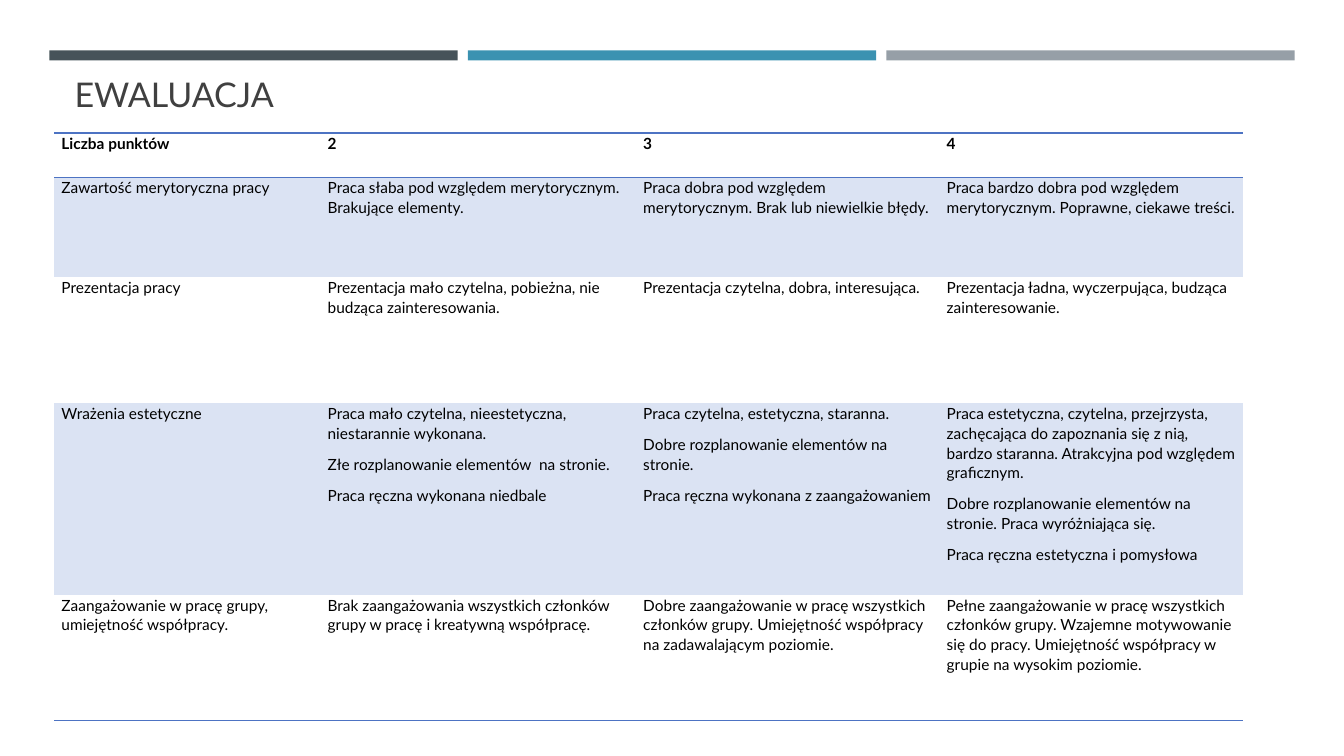
from lxml.etree import SubElement
from pptx import Presentation
from pptx.dml.color import RGBColor
from pptx.enum.shapes import MSO_SHAPE
from pptx.enum.text import MSO_ANCHOR, MSO_AUTO_SIZE, PP_ALIGN
from pptx.oxml.ns import qn
from pptx.util import Inches, Pt

SLATE = RGBColor(0x46, 0x53, 0x59)
TEAL = RGBColor(0x3B, 0x92, 0xB1)
GREY = RGBColor(0x96, 0x9F, 0xA7)
DARK = RGBColor(0x40, 0x40, 0x40)
BLACK = RGBColor(0, 0, 0)
BLUE = RGBColor(0x4D, 0x73, 0xC3)
PALE = RGBColor(0xDB, 0xE3, 0xF3)

COLS = [2.64, 3.13, 3.01, 3.01]
ROWS = [0.44, 0.99, 1.25, 1.9, 1.25]
TEXTS = [
    ["Liczba punktów", "2", "3", "4"],
    ["Zawartość merytoryczna pracy",
     "Praca słaba pod względem merytorycznym. Brakujące elementy.",
     "Praca dobra pod względem merytorycznym. Brak lub niewielkie błędy.",
     "Praca bardzo dobra pod względem merytorycznym. "
     "Poprawne, ciekawe treści."],
    ["Prezentacja pracy",
     "Prezentacja mało czytelna, pobieżna, nie budząca zainteresowania.",
     "Prezentacja czytelna, dobra, interesująca.",
     "Prezentacja ładna, wyczerpująca, budząca zainteresowanie."],
    ["Wrażenia estetyczne",
     "Praca mało czytelna, nieestetyczna, niestarannie wykonana.\n"
     "Złe rozplanowanie elementów  na stronie.\n"
     "Praca ręczna wykonana niedbale",
     "Praca czytelna, estetyczna, staranna.\n"
     "Dobre rozplanowanie elementów na stronie.\n"
     "Praca ręczna wykonana z zaangażowaniem",
     "Praca estetyczna, czytelna, przejrzysta, zachęcająca do zapoznania "
     "się z nią, bardzo staranna. Atrakcyjna pod względem graficznym.\n"
     "Dobre rozplanowanie elementów na stronie. Praca wyróżniająca się.\n"
     "Praca ręczna estetyczna i pomysłowa"],
    ["Zaangażowanie w pracę grupy, umiejętność współpracy.",
     "Brak zaangażowania wszystkich członków grupy w pracę "
     "i kreatywną współpracę.",
     "Dobre zaangażowanie w pracę wszystkich członków grupy. "
     "Umiejętność współpracy na zadawalającym poziomie.",
     "Pełne zaangażowanie w pracę wszystkich członków grupy. "
     "Wzajemne motywowanie się do pracy. "
     "Umiejętność współpracy w grupie na wysokim poziomie."],
]


def put(frame, text, size=11, color=BLACK, bold=False, lead=1.06, after=8):
    frame.text = text
    for para in frame.paragraphs:
        para.alignment = PP_ALIGN.LEFT
        para.line_spacing = lead
        para.space_before = Pt(0)
        para.space_after = Pt(after)
        for run in para.runs:
            font = run.font
            font.name = "Lato"
            font.size = Pt(size)
            font.bold = bold
            font.color.rgb = color


def edge(cell, sides):
    """Draw the given sides (T, B) in blue and hide the others."""
    props = cell._tc.get_or_add_tcPr()
    for spot, side in enumerate("LRTB"):
        line = SubElement(props, qn(f"a:ln{side}"), w=str(Pt(1)))
        if side in sides:
            fill = SubElement(line, qn("a:solidFill"))
            SubElement(fill, qn("a:srgbClr"), val=str(BLUE))
        else:
            SubElement(line, qn("a:noFill"))
        props.insert(spot, line)


deck = Presentation()
deck.slide_width, deck.slide_height = Inches(13.33), Inches(7.5)
slide = deck.slides.add_slide(deck.slide_layouts[5])

# Three bars along the top
for i, color in enumerate([SLATE, TEAL, GREY]):
    bar = slide.shapes.add_shape(
        MSO_SHAPE.RECTANGLE, Inches(0.49 + 4.15 * i), Inches(0.5),
        Inches(4.05), Inches(0.1))
    bar.shadow.inherit = False
    bar.fill.solid()
    bar.fill.fore_color.rgb = color
    bar.line.fill.background()

# Title
title = slide.shapes.title
title.left, title.top = Inches(0.64), Inches(0.77)
title.width, title.height = Inches(12.06), Inches(0.42)
put(title.text_frame, "EWALUACJA", size=24.3, color=DARK, lead=0.9, after=0)
title.text_frame.vertical_anchor = MSO_ANCHOR.BOTTOM
title.text_frame.auto_size = MSO_AUTO_SIZE.NONE

# Grading table
table = slide.shapes.add_table(
    len(ROWS), len(COLS), Inches(0.54), Inches(1.32),
    Inches(sum(COLS)), Inches(sum(ROWS))).table
table.first_row = table.horz_banding = False
for col, width in zip(table.columns, COLS):
    col.width = Inches(width)
for row, height in zip(table.rows, ROWS):
    row.height = Inches(height)

# Cells: bold head, shaded odd rows, rules around the head and at the foot
rules = {0: "TB", 1: "T", len(ROWS) - 1: "B"}
for r, texts in enumerate(TEXTS):
    for c, text in enumerate(texts):
        cell = table.cell(r, c)
        put(cell.text_frame, text, bold=r == 0)
        cell.margin_left = cell.margin_right = Inches(0.07)
        cell.margin_top = cell.margin_bottom = 0
        if r % 2:
            cell.fill.solid()
            cell.fill.fore_color.rgb = PALE
        else:
            cell.fill.background()
        edge(cell, rules.get(r, ""))

deck.save("out.pptx")
